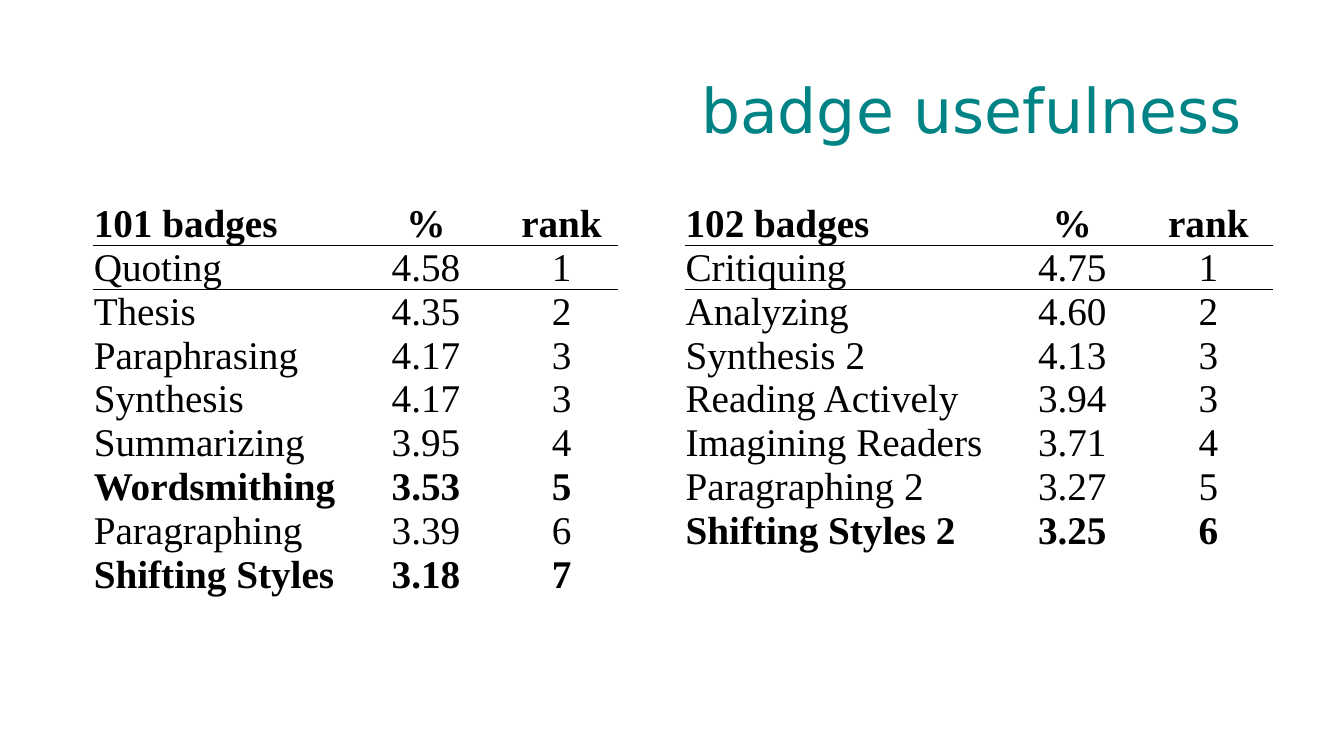
from lxml.etree import SubElement
from pptx import Presentation
from pptx.dml.color import RGBColor as Color
from pptx.enum.text import MSO_ANCHOR as Anchor, PP_ALIGN as Align
from pptx.oxml.ns import qn
from pptx.util import Inches, Pt

COLORS = {"title": "008385", "text": "000000", "rule": "000000"}
PLAIN_STYLE = "{2D5ABB26-0587-4C30-8999-92F81FD0307C}"
ROW_HEIGHT = 0.41
RULED_ROWS = (0, 1)

BADGES_101 = [
    ("101 badges", "%", "rank"),
    ("Quoting", "4.58", "1"),
    ("Thesis", "4.35", "2"),
    ("Paraphrasing", "4.17", "3"),
    ("Synthesis", "4.17", "3"),
    ("Summarizing", "3.95", "4"),
    ("Wordsmithing", "3.53", "5"),
    ("Paragraphing", "3.39", "6"),
    ("Shifting Styles", "3.18", "7"),
]
BADGES_102 = [
    ("102 badges", "%", "rank"),
    ("Critiquing", "4.75", "1"),
    ("Analyzing", "4.60", "2"),
    ("Synthesis 2", "4.13", "3"),
    ("Reading Actively", "3.94", "3"),
    ("Imagining Readers", "3.71", "4"),
    ("Paragraphing 2", "3.27", "5"),
    ("Shifting Styles 2", "3.25", "6"),
]


def style_paragraph(para, font_name, size, color, align, spacing, bold=False):
    """Align and space a paragraph and format its runs."""
    para.alignment = align
    para.line_spacing = spacing
    for span in para.runs:
        span.font.name = font_name
        span.font.size = Pt(size)
        span.font.bold = bold
        span.font.color.rgb = Color.from_string(COLORS[color])


def rule_below(cell):
    """Draw a thin line along the bottom edge of a cell."""
    properties = cell._tc.get_or_add_tcPr()
    line = SubElement(properties, qn("a:lnB"), w=str(Pt(1)))
    fill = SubElement(line, qn("a:solidFill"))
    SubElement(fill, qn("a:srgbClr"), val=COLORS["rule"])
    properties.insert(0, line)


def add_title(page, left, top, width, height, text):
    """Place the right-aligned slide title in the given box."""
    box = page.shapes.add_textbox(*map(Inches, (left, top, width, height)))
    frame = box.text_frame
    frame.word_wrap = True
    frame.vertical_anchor = Anchor.MIDDLE
    frame.text = text
    para = frame.paragraphs[0]
    style_paragraph(para, "DejaVu Sans", 44, "title", Align.RIGHT, 0.9)


def fill_cell(cell, text, align, bold):
    """Write one table entry with tight margins."""
    cell.margin_left = cell.margin_right = cell.margin_top = Inches(0.01)
    cell.margin_bottom = 0
    cell.vertical_anchor = Anchor.BOTTOM
    cell.fill.background()
    cell.text = text
    para = cell.text_frame.paragraphs[0]
    style_paragraph(para, "Times New Roman", 28, "text", align, 0.91, bold)


def add_badge_table(page, left, top, widths, badges, bold_names):
    """Place a ranking table at the given corner."""
    size = (sum(widths), ROW_HEIGHT * len(badges))
    frame = page.shapes.add_table(
        len(badges), len(widths), *map(Inches, (left, top, *size)))
    table = frame.table
    table.first_row = table.horz_banding = False
    table._tbl.tblPr.find(qn("a:tableStyleId")).text = PLAIN_STYLE
    for column, width in zip(table.columns, widths):
        column.width = Inches(width)
    for row_index, entries in enumerate(badges):
        table.rows[row_index].height = Inches(ROW_HEIGHT)
        bold = row_index == 0 or entries[0] in bold_names
        for column_index, text in enumerate(entries):
            cell = table.cell(row_index, column_index)
            align = Align.CENTER if column_index else Align.LEFT
            fill_cell(cell, text, align, bold)
            if row_index in RULED_ROWS:
                rule_below(cell)


def main():
    """Build the badge usefulness slide."""
    deck = Presentation()
    deck.slide_width, deck.slide_height = Inches(13.33), Inches(7.5)
    page = deck.slides.add_slide(deck.slide_layouts[6])
    add_title(page, 0.92, 0.4, 11.5, 1.45, "badge usefulness")
    add_badge_table(page, 0.92, 2, (2.52, 1.57, 1.12), BADGES_101,
                    ("Wordsmithing", "Shifting Styles"))
    add_badge_table(page, 6.79, 2, (3.14, 1.41, 1.29), BADGES_102,
                    ("Shifting Styles 2",))
    deck.save("out.pptx")


if __name__ == "__main__":
    main()
